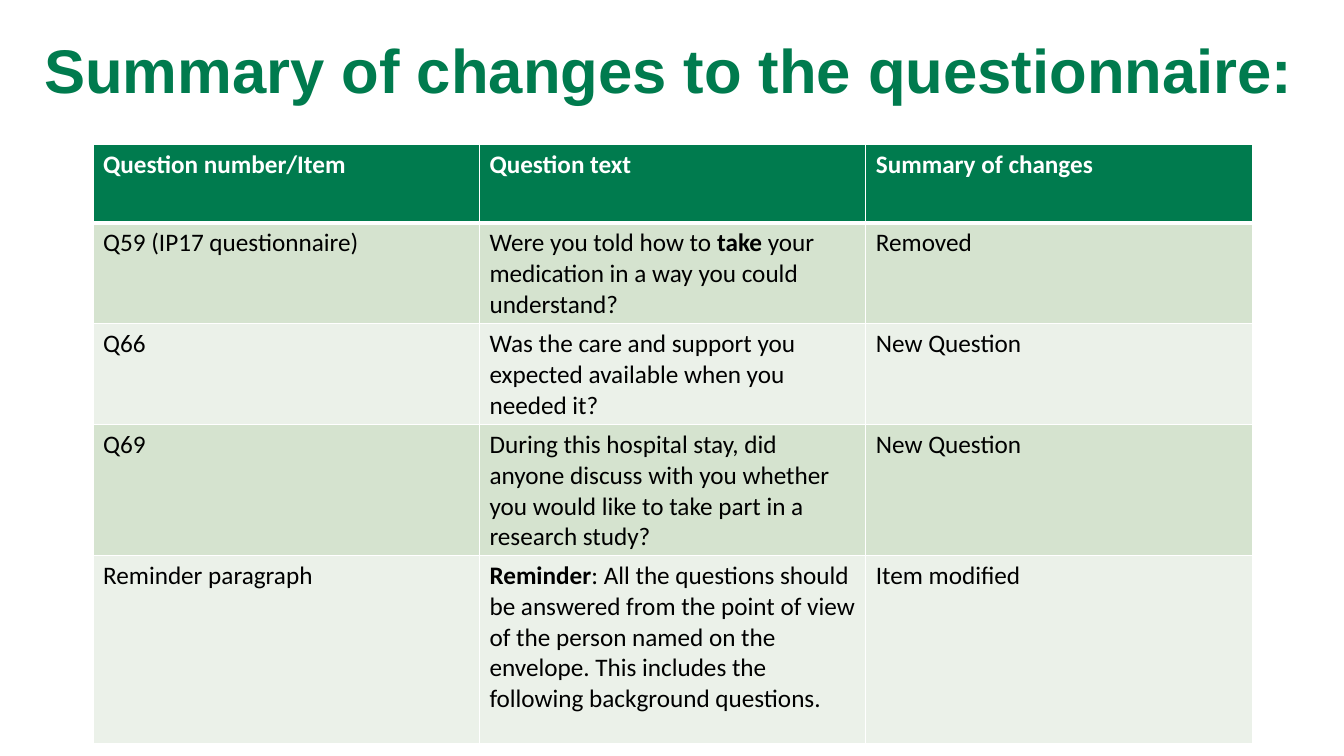
from dataclasses import dataclass

from pptx import Presentation
from pptx.dml.color import RGBColor
from pptx.enum import text
from pptx.oxml import parse_xml
from pptx.oxml.ns import nsdecls
from pptx.util import Pt

GREEN, WHITE, BLACK = "007B4E", "FFFFFF", "000000"
BANDS = ("D5E3CF", "EBF1E9")
COLUMN_WIDTH = 276


@dataclass(frozen=True)
class Span:
    words: str
    bold: bool = False


@dataclass(frozen=True)
class Row:
    height: float
    item: str
    question: tuple[Span, ...]
    change: str


HEADER = Row(56, "Question number/Item", (Span("Question text"),), "Summary of changes")
CHANGES = (
    Row(70.5, "Q59 (IP17 questionnaire)", (
        Span("Were you told how to "),
        Span("take", bold=True),
        Span(" your medication in a way you could understand?"),
    ), "Removed"),
    Row(70.5, "Q66", (
        Span("Was the care and support you expected available when you needed it?"),
    ), "New Question"),
    Row(91.5, "Q69", (
        Span("During this hospital stay, did anyone discuss with you whether "
             "you would like to take part in a research study?"),
    ), "New Question"),
    Row(134, "Reminder paragraph", (
        Span("Reminder", bold=True),
        Span(": All the questions should be answered from the point of view of the person "
             "named on the envelope. This includes the following background questions."),
    ), "Item modified"),
)


def color(value: str) -> RGBColor:
    return RGBColor.from_string(value)


def set_font(font, name: str, size: float, value: str) -> None:
    font.name = name
    font.size = Pt(size)
    font.color.rgb = color(value)


def add_title(page, words: str) -> None:
    box = page.shapes.add_textbox(Pt(24.5), Pt(0), Pt(910), Pt(104.5))
    frame = box.text_frame
    frame.word_wrap = True
    frame.vertical_anchor = text.MSO_ANCHOR.MIDDLE
    para = frame.paragraphs[0]
    para.text = words
    para.line_spacing = 0.9
    set_font(para.font, "Arial", 44, GREEN)
    para.font.bold = True


def set_borders(cell, top: float, bottom: float) -> None:
    """Draw white cell edges; the line elements must precede the fill."""
    properties = cell._tc.get_or_add_tcPr()
    widths = {"lnL": 1, "lnR": 1, "lnT": top, "lnB": bottom}
    for index, (edge, width) in enumerate(widths.items()):
        properties.insert(index, parse_xml(
            f'<a:{edge} {nsdecls("a")} w="{Pt(width)}"><a:solidFill>'
            f'<a:srgbClr val="{WHITE}"/></a:solidFill></a:{edge}>'))


def fill_cell(cell, spans: tuple[Span, ...], fill: str, ink: str, bold: bool) -> None:
    cell.fill.solid()
    cell.fill.fore_color.rgb = color(fill)
    para = cell.text_frame.paragraphs[0]
    set_font(para.font, "Calibri", 18, ink)
    for span in spans:
        run = para.add_run()
        run.text = span.words
        run.font.bold = bold or span.bold


def add_changes_table(page) -> None:
    rows = (HEADER, *CHANGES)
    total = sum(row.height for row in rows)
    table = page.shapes.add_table(
        len(rows), 3, Pt(66.5), Pt(103.25), Pt(3 * COLUMN_WIDTH), Pt(total)).table
    for column in table.columns:
        column.width = Pt(COLUMN_WIDTH)
    for index, row in enumerate(rows):
        table.rows[index].height = Pt(row.height)
        is_header = index == 0
        fill = GREEN if is_header else BANDS[(index - 1) % 2]
        ink = WHITE if is_header else BLACK
        contents = ((Span(row.item),), row.question, (Span(row.change),))
        for cell, spans in zip(table.rows[index].cells, contents):
            fill_cell(cell, spans, fill, ink, bold=is_header)
            set_borders(cell, top=3 if index == 1 else 1, bottom=3 if is_header else 1)


def main() -> None:
    deck = Presentation()
    deck.slide_width, deck.slide_height = Pt(960), Pt(540)
    page = deck.slides.add_slide(deck.slide_layouts[6])
    add_title(page, "Summary of changes to the questionnaire:")
    add_changes_table(page)
    deck.save("out.pptx")


if __name__ == "__main__":
    main()
